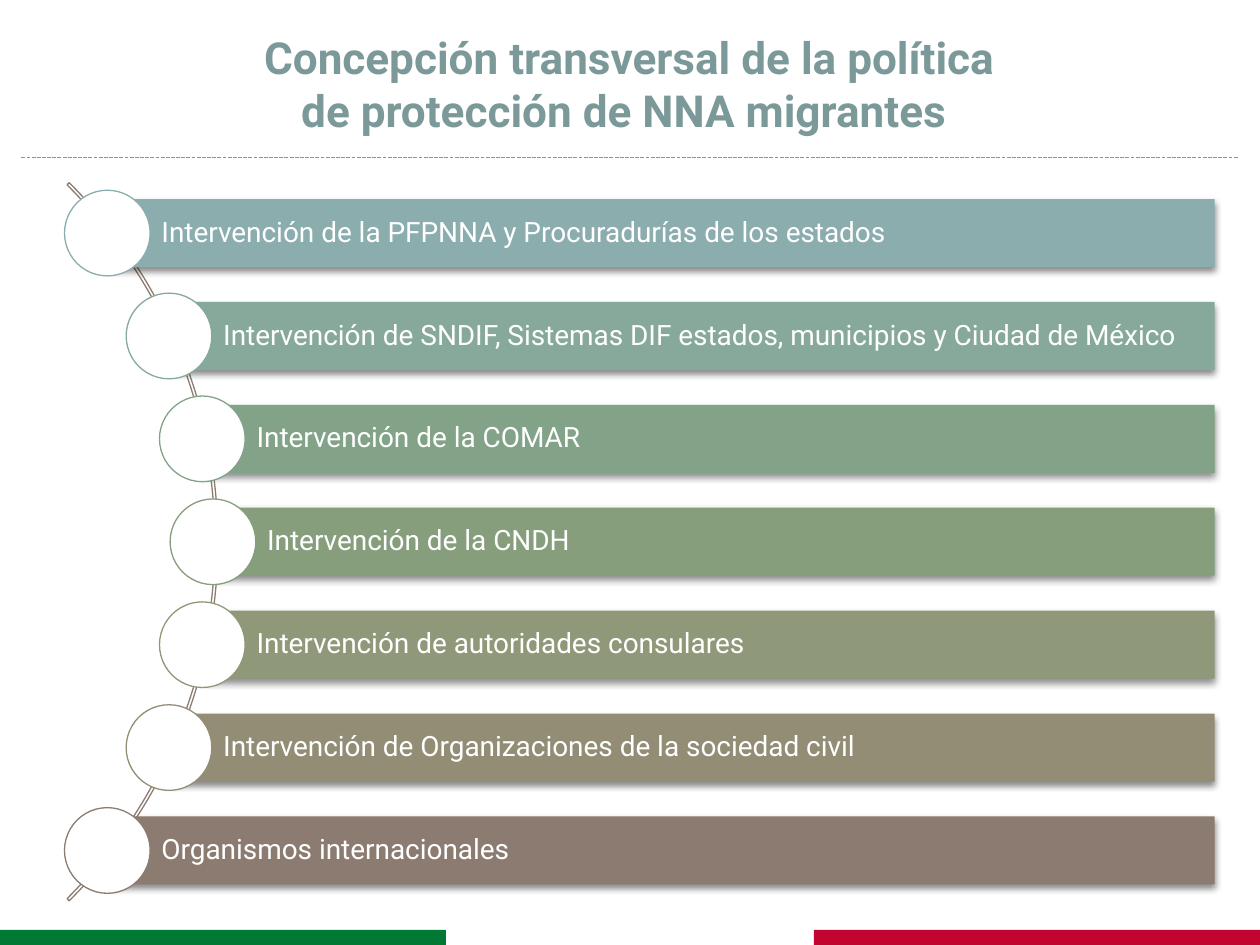
"""Build the slide on the cross-cutting policy for protecting migrant children."""
from math import sqrt

from lxml import etree
from pptx import Presentation
from pptx.dml.color import RGBColor
from pptx.enum.dml import MSO_LINE
from pptx.enum.shapes import MSO_CONNECTOR, MSO_SHAPE
from pptx.enum.text import MSO_ANCHOR, PP_ALIGN
from pptx.oxml.ns import qn
from pptx.util import Inches, Pt

RECTANGLE, OVAL, BLOCK_ARC = MSO_SHAPE.RECTANGLE, MSO_SHAPE.OVAL, MSO_SHAPE.BLOCK_ARC
STRAIGHT, SYSTEM_DASH = MSO_CONNECTOR.STRAIGHT, MSO_LINE.SQUARE_DOT
MIDDLE, LEFT, CENTER = MSO_ANCHOR.MIDDLE, PP_ALIGN.LEFT, PP_ALIGN.CENTER

WHITE = RGBColor(0xFF, 0xFF, 0xFF)
TITLE_TEAL = RGBColor(0x7C, 0x99, 0x9A)
FLAG_GREEN = RGBColor(0x00, 0x79, 0x35)
FLAG_RED = RGBColor(0xC2, 0x04, 0x30)
ARC_BROWN = RGBColor(0x8C, 0x7B, 0x70)

TITLE = "Concepción transversal de la política\vde protección de NNA migrantes "
ACTORS = [
    ("Intervención de la PFPNNA y Procuradurías de los estados", RGBColor(0x8C, 0xAD, 0xAE)),
    ("Intervención de SNDIF, Sistemas DIF estados, municipios y Ciudad de México",
     RGBColor(0x87, 0xA9, 0x9B)),
    ("Intervención de la COMAR", RGBColor(0x82, 0xA3, 0x87)),
    ("Intervención de la CNDH", RGBColor(0x87, 0x9E, 0x7D)),
    ("Intervención de autoridades consulares", RGBColor(0x8F, 0x98, 0x79)),
    ("Intervención de Organizaciones de la sociedad civil", RGBColor(0x92, 0x8D, 0x74)),
    ("Organismos internacionales", ARC_BROWN),
]

SLIDE_WIDTH, SLIDE_HEIGHT = 10, 7.5
FLAG_WIDTH, FLAG_HEIGHT = 3.54, 0.12
FIRST_CENTER, LAST_CENTER = 1.85, 6.75
CURVE_X, CURVE_RADIUS = -2.31, 4
BAR_RIGHT, BAR_HEIGHT = 9.64, 0.54
CIRCLE_SIZE = 0.68
ARC_SIZE = 8.06

TITLE_FONT = {"name": "Roboto", "size": Pt(25.2), "bold": True}
BAR_FONT = {"name": "Roboto", "size": Pt(16), "bold": False}
BAR_FRAME = {
    "word_wrap": True,
    "vertical_anchor": MIDDLE,
    "margin_left": Inches(0.43),
    "margin_top": Inches(0.04),
    "margin_right": Inches(0.04),
    "margin_bottom": Inches(0.04),
}


def apply_format(target, values):
    """Set each named attribute on the target."""
    for name, value in values.items():
        setattr(target, name, value)


def add_shape(slide, kind, box, fill=None, outline=None):
    """Add a flat shape with an optional fill and thin outline."""
    shape = slide.shapes.add_shape(kind, *map(Inches, box))
    shape.shadow.inherit = False
    if fill is None:
        shape.fill.background()
    else:
        shape.fill.solid()
        shape.fill.fore_color.rgb = fill
    if outline is None:
        shape.line.fill.background()
    else:
        shape.line.color.rgb = outline
        shape.line.width = Pt(0.75)
    return shape


def add_soft_shadow(shape):
    """Give the shape a soft black shadow straight below it."""
    effects = shape._element.spPr.find(qn("a:effectLst"))
    shadow = etree.SubElement(effects, qn("a:outerShdw"), blurRad=str(Pt(4)),
                              dist=str(Pt(2)), dir="5400000", rotWithShape="0")
    color = etree.SubElement(shadow, qn("a:srgbClr"), val="000000")
    etree.SubElement(color, qn("a:alpha"), val="45000")


def write_text(frame, text, font, color, alignment):
    """Write one formatted paragraph into the frame and return it."""
    frame.text = text
    para = frame.paragraphs[0]
    para.alignment = alignment
    for span in para.runs:
        apply_format(span.font, font)
        span.font.color.rgb = color
    return para


def add_title(slide):
    """Place and format the title placeholder."""
    title = slide.shapes.title
    apply_format(title, {"left": Inches(0.33), "top": Inches(0.25),
                         "width": Inches(9.33), "height": Inches(0.83)})
    title.text_frame.vertical_anchor = MIDDLE
    write_text(title.text_frame, TITLE, TITLE_FONT, TITLE_TEAL, CENTER)


def add_divider(slide):
    """Draw the dashed line under the title."""
    ends = map(Inches, (0.17, 1.25, 9.83, 1.25))
    divider = slide.shapes.add_connector(STRAIGHT, *ends)
    apply_format(divider.line, {"width": Pt(0.75), "dash_style": SYSTEM_DASH})
    divider.line.color.rgb = TITLE_TEAL
    etree.SubElement(divider._element.spPr, qn("a:effectLst"))


def add_flag_bands(slide):
    """Draw the green and red bands along the bottom edge."""
    for left, color in ((0, FLAG_GREEN), (SLIDE_WIDTH - FLAG_WIDTH, FLAG_RED)):
        box = (left, SLIDE_HEIGHT - FLAG_HEIGHT, FLAG_WIDTH, FLAG_HEIGHT)
        add_shape(slide, RECTANGLE, box, color)


def add_arc(slide):
    """Draw the thin arc that joins the circles."""
    arc = add_shape(slide, BLOCK_ARC, (-6.33, 0.27, ARC_SIZE, ARC_SIZE), outline=ARC_BROWN)
    for index, value in enumerate((189, 27, 0.003)):
        arc.adjustments[index] = value


def add_actor(slide, text, color, center_x, center_y):
    """Add a labelled bar and the circle at its left end."""
    bar_box = (center_x, center_y - BAR_HEIGHT / 2, BAR_RIGHT - center_x, BAR_HEIGHT)
    bar = add_shape(slide, RECTANGLE, bar_box, color)
    add_soft_shadow(bar)
    apply_format(bar.text_frame, BAR_FRAME)
    para = write_text(bar.text_frame, text, BAR_FONT, WHITE, LEFT)
    para.line_spacing = 0.9
    circle_box = (center_x - CIRCLE_SIZE / 2, center_y - CIRCLE_SIZE / 2,
                  CIRCLE_SIZE, CIRCLE_SIZE)
    add_shape(slide, OVAL, circle_box, WHITE, color)


def add_actors(slide):
    """Space the actors evenly down the curve."""
    pitch = (LAST_CENTER - FIRST_CENTER) / (len(ACTORS) - 1)
    middle = (FIRST_CENTER + LAST_CENTER) / 2
    for index, (text, color) in enumerate(ACTORS):
        center_y = FIRST_CENTER + index * pitch
        center_x = CURVE_X + sqrt(CURVE_RADIUS ** 2 - (center_y - middle) ** 2)
        add_actor(slide, text, color, center_x, center_y)


def main():
    """Build and save the deck."""
    deck = Presentation()
    deck.slide_width, deck.slide_height = Inches(SLIDE_WIDTH), Inches(SLIDE_HEIGHT)
    page = deck.slides.add_slide(deck.slide_layouts[5])
    add_flag_bands(page)
    add_divider(page)
    add_title(page)
    add_arc(page)
    add_actors(page)
    deck.save("out.pptx")


if __name__ == "__main__":
    main()
